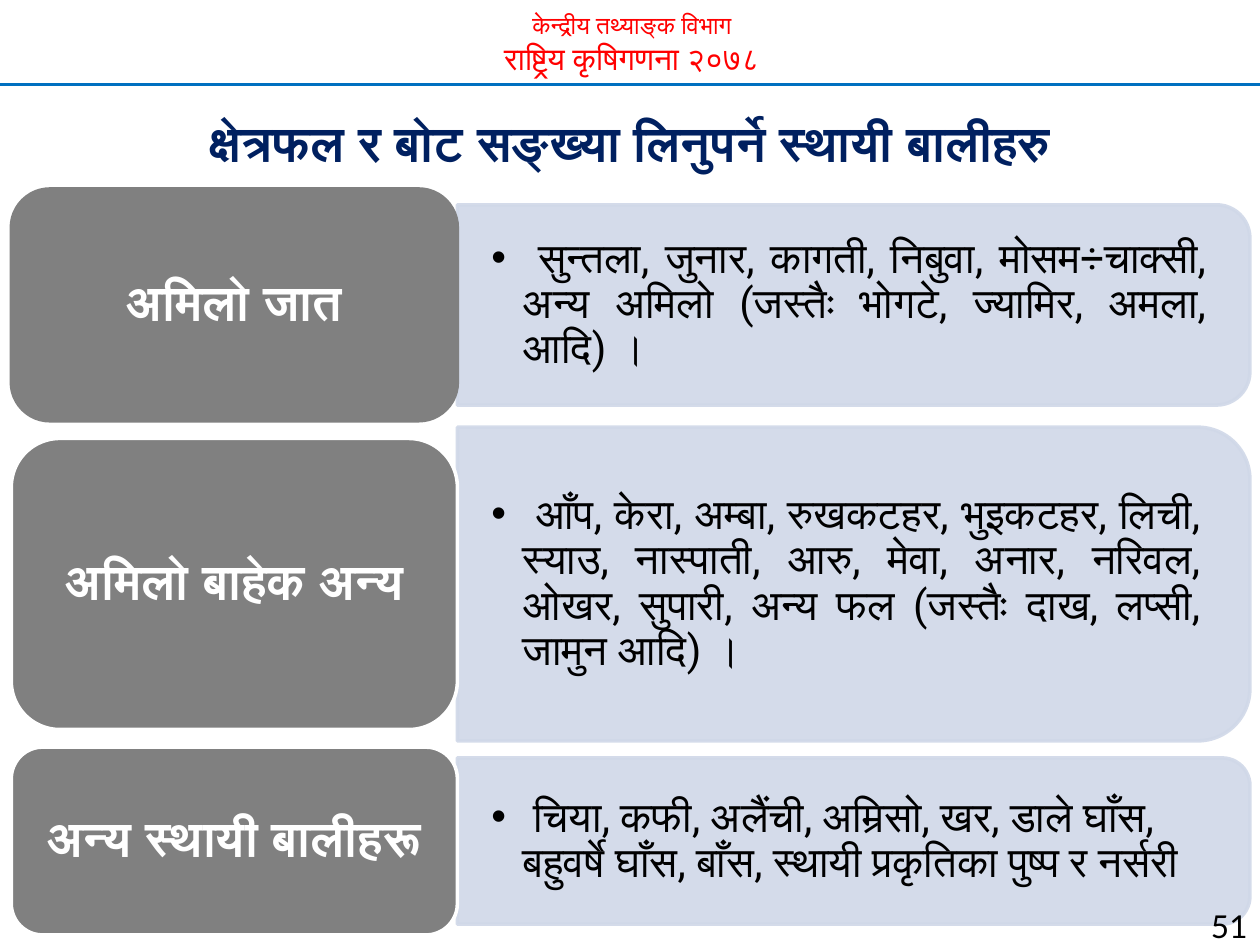
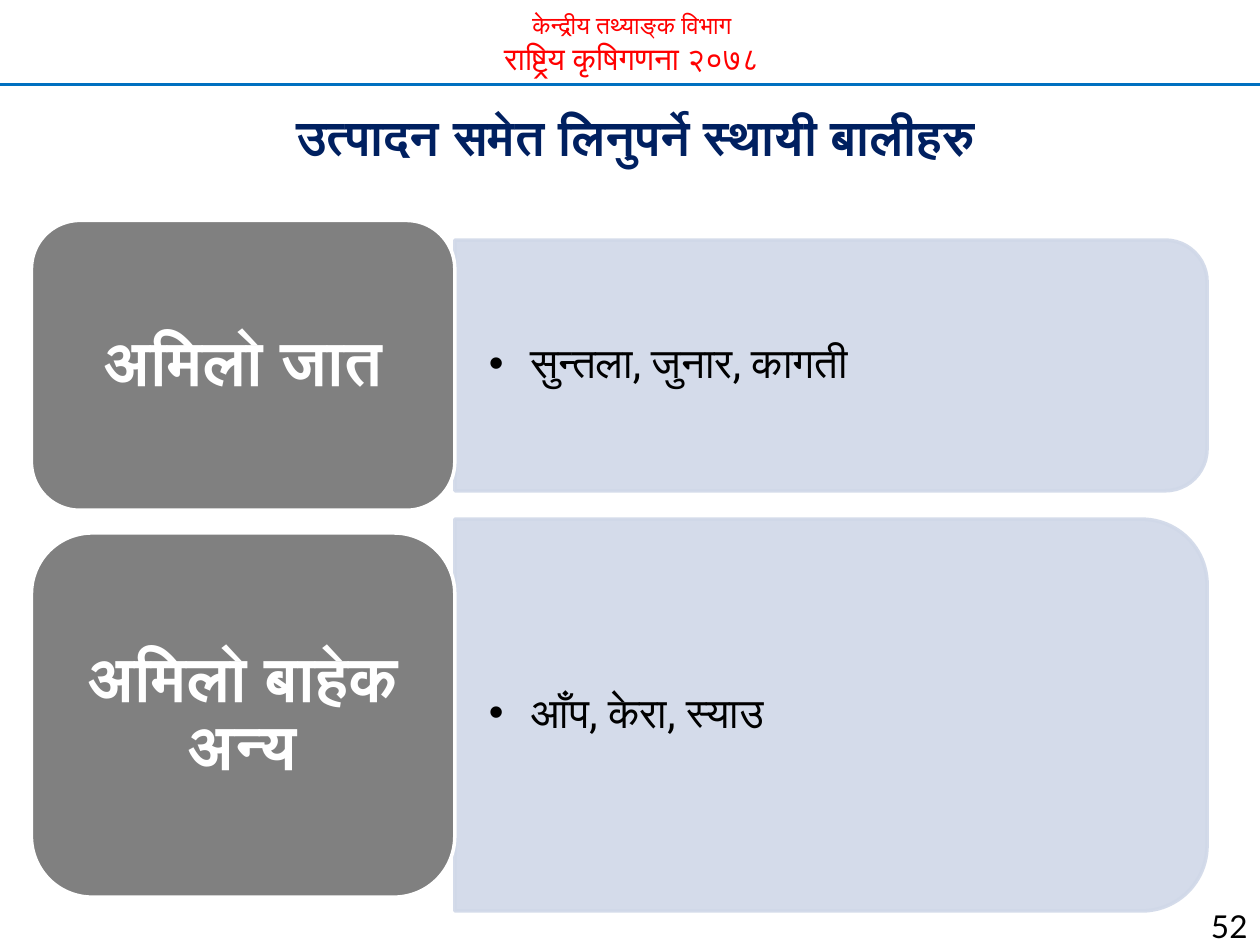
from dataclasses import dataclass

from lxml.etree import SubElement
from pptx import Presentation
from pptx.dml.color import RGBColor
from pptx.enum.shapes import MSO_CONNECTOR as Connector, MSO_SHAPE as Shape
from pptx.enum.text import MSO_ANCHOR as Anchor, MSO_AUTO_SIZE as AutoSize, PP_ALIGN as Align
from pptx.oxml.ns import qn
from pptx.util import Inches, Pt


@dataclass(frozen=True)
class Theme:
    red: RGBColor = RGBColor.from_string("FF0000")
    blue: RGBColor = RGBColor.from_string("0070C0")
    navy: RGBColor = RGBColor.from_string("002060")
    gray: RGBColor = RGBColor.from_string("808080")
    pale: RGBColor = RGBColor.from_string("D0D8E8")
    white: RGBColor = RGBColor.from_string("FFFFFF")
    black: RGBColor = RGBColor.from_string("000000")
    office_size: int = 14
    census_size: int = 18
    title_size: int = 28
    list_size: int = 24
    page_size: int = 18
    outline: int = 2


theme = Theme()
WIDTH, HEIGHT = 10, 7.5
HEADER_BOTTOM = 0.67
CORNER = 0.05  # share of a panel's height kept clear of its round corners


def write(box, text, *, size, color, font="Roboto", bold=False, align=Align.CENTER,
          spacing=1.0, margins=(0.1, 0.05), anchor=Anchor.MIDDLE, bullet=False, more=False):
    frame = box.text_frame
    frame.word_wrap = True
    frame.auto_size = AutoSize.NONE
    frame.vertical_anchor = anchor
    frame.margin_left = frame.margin_right = Inches(margins[0])
    frame.margin_top = frame.margin_bottom = Inches(margins[1])
    para = frame.add_paragraph() if more else frame.paragraphs[0]
    if bullet:
        props = para._p.get_or_add_pPr()
        props.set("marL", str(Inches(0.25)))
        props.set("indent", str(-Inches(0.25)))
        SubElement(props, qn("a:buChar"), char="•")
    para.alignment = align
    para.line_spacing = spacing
    para.space_before = Pt(0)
    span = para.add_run()
    span.text = text
    span.font.name, span.font.size, span.font.bold = font, Pt(size), bold
    span.font.color.rgb = color


def place(shape, left, top, width, height):
    shape.left, shape.top = Inches(left), Inches(top)
    shape.width, shape.height = Inches(width), Inches(height)


# Each row: tag, tag height, panel height, list text, alignment, tag outline
pages = [
    dict(
        number="51", title="क्षेत्रफल र बोट सङ्ख्या लिनुपर्ने स्थायी बालीहरु",
        title_area=(0, 0.75, 10, 0.75),
        tag_left=0.09, tag_width=3.54, top=1.5, gap=0.14, panel_width=6.29,
        tag_size=28, tag_margins=(0.12, 0.06),
        rows=[
            ("अमिलो जात", 1.84, 1.59,
             " सुन्तला, जुनार, कागती, निबुवा, मोसम÷चाक्सी, अन्य अमिलो (जस्तैः भोगटे, "
             "ज्यामिर, अमला, आदि)\u00a0।", Align.JUSTIFY, theme.gray),
            ("अमिलो बाहेक अन्य", 2.31, 2.49,
             " आँप, केरा, अम्बा, रुखकटहर, भुइकटहर, लिची, स्याउ, नास्पाती, आरु, मेवा, "
             "अनार, नरिवल, ओखर, सुपारी, अन्य फल (जस्तैः दाख, लप्सी, जामुन आदि)\u00a0।",
             Align.JUSTIFY, theme.white),
            ("अन्य स्थायी बालीहरू", 1.49, 1.32,
             " चिया, कफी, अलैंची, अम्रिसो, खर, डाले घाँस, बहुवर्षे घाँस, बाँस, "
             "स्थायी प्रकृतिका पुष्प र नर्सरी", Align.LEFT, theme.white),
        ],
    ),
    dict(
        number="52", title="उत्पादन समेत लिनुपर्ने स्थायी बालीहरु",
        title_area=(0.46, 0.83, 9.17, 0.5),
        tag_left=0.25, tag_width=3.36, top=1.75, gap=0.18, panel_width=5.97,
        tag_size=36, tag_margins=(0.15, 0.07),
        rows=[
            ("अमिलो जात", 2.3, 1.99, " सुन्तला, जुनार, कागती", Align.LEFT, theme.white),
            ("अमिलो बाहेक अन्य", 2.89, 3.11, " आँप, केरा, स्याउ", Align.LEFT, theme.white),
        ],
    ),
]

deck = Presentation()
deck.slide_width, deck.slide_height = Inches(WIDTH), Inches(HEIGHT)
comparison = deck.slide_layouts.get_by_name("Comparison")

for page in pages:
    slide = deck.slides.add_slide(comparison)
    shapes = slide.shapes
    title, *bodies = slide.placeholders

    # Header band
    header = shapes.add_textbox(0, 0, 0, 0)
    place(header, 0.7, 0.03, 8.63, 0.64)
    for text, size in (("केन्द्रीय तथ्याङ्क विभाग", theme.office_size),
                       ("राष्ट्रिय कृषिगणना २०७८", theme.census_size)):
        write(header, text, size=size, color=theme.red, font="Calibri",
              anchor=Anchor.TOP, more=size == theme.census_size)
    rule = shapes.add_connector(Connector.STRAIGHT, 0, Inches(HEADER_BOTTOM),
                                Inches(WIDTH), Inches(HEADER_BOTTOM))
    rule.line.color.rgb, rule.line.width = theme.blue, Pt(1.5)
    SubElement(rule.element.spPr, qn("a:effectLst"))

    # Title
    place(title, *page["title_area"])
    write(title, page["title"], size=theme.title_size, color=theme.navy, bold=True)

    # Rows: a pale panel with its list, and a tag centred on the same line
    top = page["top"]
    panel_left = page["tag_left"] + page["tag_width"]
    panel_width = page["panel_width"]
    for body, (tag_text, tag_height, panel_height, items, align, outline) in zip(
            bodies, page["rows"]):
        middle = top + tag_height / 2

        panel = shapes.add_shape(Shape.ROUND_2_SAME_RECTANGLE, 0, 0, 0, 0)
        place(panel, panel_left + (panel_width - panel_height) / 2,
              middle - panel_width / 2, panel_height, panel_width)
        panel.rotation = 90
        panel.shadow.inherit = False
        panel.fill.solid()
        panel.fill.fore_color.rgb = panel.line.color.rgb = theme.pale
        panel.line.width = Pt(theme.outline)
        for color in panel.element.spPr.iter(qn("a:srgbClr")):
            SubElement(color, qn("a:alpha"), val="90000")

        place(body, panel_left, middle - 0.45 * panel_height,
              panel_width - CORNER * panel_height, 0.9 * panel_height)
        write(body, items, size=theme.list_size, color=theme.black, align=align,
              spacing=0.9, margins=(0.27, 0.14), bullet=True)
        panel.element.addnext(body.element)

        tag = shapes.add_shape(Shape.ROUNDED_RECTANGLE, 0, 0, 0, 0)
        place(tag, page["tag_left"], top, page["tag_width"], tag_height)
        tag.shadow.inherit = False
        tag.fill.solid()
        tag.fill.fore_color.rgb = theme.gray
        tag.line.color.rgb, tag.line.width = outline, Pt(theme.outline)
        write(tag, tag_text, size=page["tag_size"], color=theme.white, bold=True,
              spacing=0.9, margins=page["tag_margins"])
        top += tag_height + page["gap"]

    for unused in bodies[len(page["rows"]):]:
        unused.element.getparent().remove(unused.element)

    # Page number
    number = shapes.add_textbox(0, 0, 0, 0)
    place(number, 9.23, 7, 0.77, 0.42)
    write(number, page["number"], size=theme.page_size, color=theme.black, font="Lato",
          align=Align.RIGHT, spacing=1.5, anchor=Anchor.TOP)

deck.save("out.pptx")
